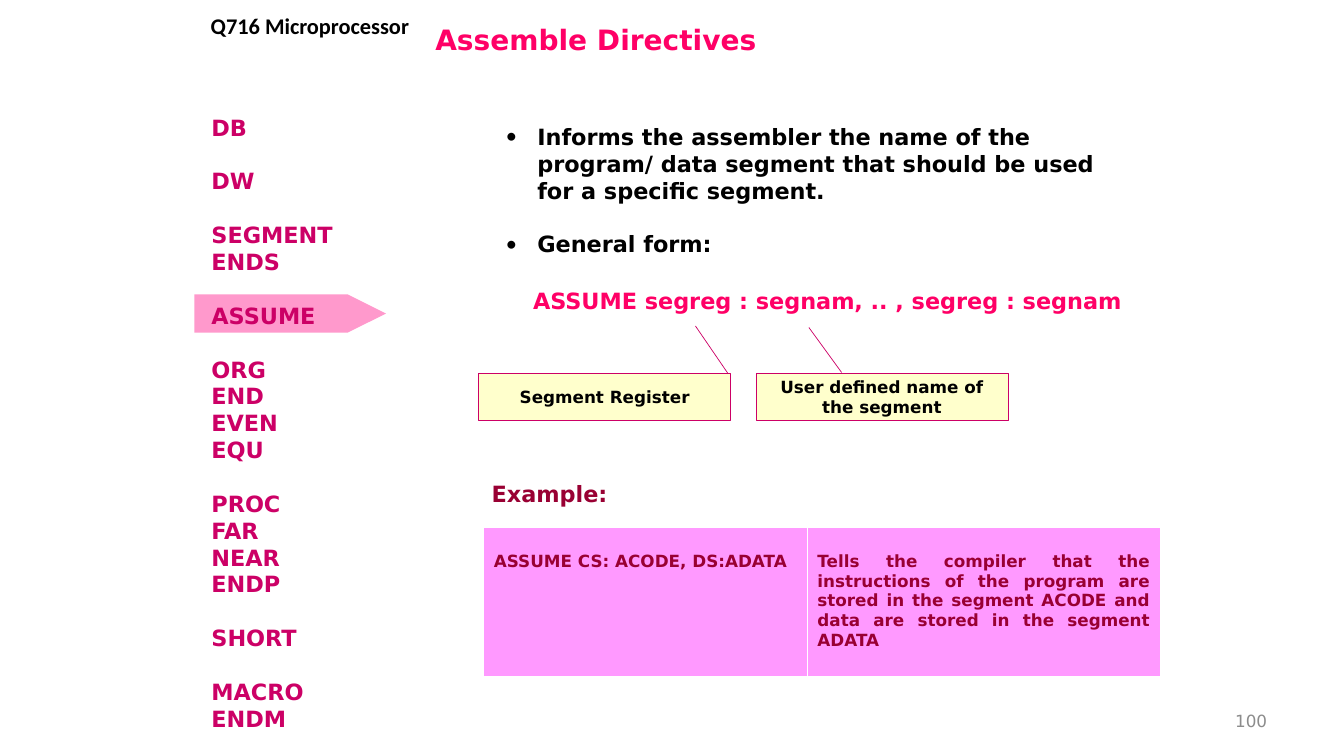
"""Build the slide on the ASSUME assembler directive."""
from dataclasses import dataclass, field
from typing import Any

from lxml.etree import SubElement
from pptx import Presentation
from pptx.dml.color import RGBColor
from pptx.enum.shapes import MSO_SHAPE as Kind
from pptx.enum.text import MSO_ANCHOR as Anchor, PP_ALIGN as Align
from pptx.oxml import parse_xml
from pptx.oxml.ns import nsdecls, qn
from pptx.util import Pt

SANS = "DejaVu Sans"
PINK, ROSE, WINE, BLACK = "FF0066", "CC0066", "990033", "000000"
STEP = 19.2


@dataclass
class Label:
    box: tuple[float, float, float, float]
    groups: list[list[str]]
    hue: str
    size: float = 16
    font: str = SANS
    bold: bool = True
    align: Any = Align.LEFT
    anchor: Any = Anchor.TOP
    wrap: bool = True
    lead: float | None = None
    dots: bool = False


@dataclass
class Callout:
    left: float
    text: str
    bends: tuple[float, ...]


@dataclass
class Cell:
    text: str
    width: float
    align: Any = field(default=Align.LEFT)


LABELS = [
    Label((303.84, 8.64, 632.16, 38.16), [["Assemble Directives"]], PINK, 20, anchor=Anchor.MIDDLE),
    Label((688.32, 500.4, 223.92, 28.8), [["100"]], "8C8C8C", 12, bold=False,
          align=Align.RIGHT, anchor=Anchor.MIDDLE),
    Label((125.28, 5.04, 192.24, 26.64), [["Q716 Microprocessor"]], BLACK, font="Calibri",
          align=Align.CENTER),
    Label((144, 77.76, 117.36, 452.88),
          [["DB"], ["DW"], ["SEGMENT", "ENDS"], ["ASSUME"], ["ORG", "END", "EVEN", "EQU"],
           ["PROC", "FAR", "NEAR", "ENDP"], ["SHORT"], ["MACRO", "ENDM"]], ROSE, lead=STEP),
    Label((354.24, 84.24, 444.24, 104.4),
          [["Informs the assembler the name of the program/ data segment that should be used "
            "for a specific segment."], ["General form:"]], BLACK, lead=STEP, dots=True),
    Label((373.68, 201.6, 436.32, 26.64),
          [["ASSUME segreg : segnam, .. , segreg : segnam"]], PINK, wrap=False),
    Label((344.16, 339.12, 103.68, 26.64), [["Example:"]], WINE, wrap=False),
]
CALLOUTS = [
    Callout(342, "Segment Register", (0.02, 0.99, -0.99, 0.86)),
    Callout(540, "User defined name of the segment", (-0.01, 0.34, -0.96, 0.21)),
]
CELLS = [
    Cell("ASSUME CS: ACODE, DS:ADATA", 231.12),
    Cell("Tells the compiler that the instructions of the program are stored in the segment "
         "ACODE and data are stored in the segment ADATA", 252, Align.JUSTIFY),
]


def put(item: Any, vals: dict[str, Any]) -> None:
    """Set each named attribute."""
    for name, val in vals.items():
        setattr(item, name, val)


def tint(hue: str) -> RGBColor:
    """Turn a hex string into a colour."""
    return RGBColor.from_string(hue)


def paint(item: Any, hue: str) -> None:
    """Give a solid fill."""
    item.fill.solid()
    item.fill.fore_color.rgb = tint(hue)


def write(para: Any, text: str, hue: str, size: float, font: str = SANS, bold: bool = True) -> None:
    """Add one styled run."""
    run = para.add_run()
    run.text = text
    put(run.font, {"name": font, "size": Pt(size), "bold": bold})
    run.font.color.rgb = tint(hue)


def dot(para: Any) -> None:
    """Give a paragraph a hanging bullet."""
    props = para._p.get_or_add_pPr()
    hang = Pt(22.5)
    props.set("marL", str(hang))
    props.set("indent", str(-hang))
    SubElement(props, qn("a:buFont")).set("typeface", "Calibri")
    SubElement(props, qn("a:buChar")).set("char", "•")


def add_label(slide: Any, item: Label) -> None:
    """Draw a text box of one or more line groups."""
    frame = slide.shapes.add_textbox(*map(Pt, item.box)).text_frame
    put(frame, {"word_wrap": item.wrap, "vertical_anchor": item.anchor})
    para = None
    for group in item.groups:
        for row, text in enumerate(group):
            gap = STEP if para is not None and row == 0 else 0
            para = frame.paragraphs[0] if para is None else frame.add_paragraph()
            put(para, {"alignment": item.align, "space_before": Pt(gap)})
            if item.lead:
                para.line_spacing = Pt(item.lead)
            if item.dots:
                dot(para)
            write(para, text, item.hue, item.size, item.font, item.bold)


def add_pointer(slide: Any) -> None:
    """Draw the marker behind the current directive."""
    mark = slide.shapes.add_shape(Kind.FLOWCHART_OFFPAGE_CONNECTOR,
                                  Pt(193.68), Pt(155.52), Pt(27.36), Pt(136.8))
    mark.rotation = 270
    mark.shadow.inherit = False
    paint(mark, "FF99CC")
    mark.line.fill.background()


def add_callout(slide: Any, item: Callout) -> None:
    """Draw a boxed note with its leader line."""
    note = slide.shapes.add_shape(Kind.LINE_CALLOUT_1, Pt(item.left), Pt(266.4), Pt(180), Pt(33.84))
    for num, bend in enumerate(item.bends):
        note.adjustments[num] = bend
    note.shadow.inherit = False
    paint(note, "FFFFCC")
    note.line.color.rgb = tint(ROSE)
    note.line.width = Pt(0.5)
    put(note.text_frame, {"word_wrap": True, "vertical_anchor": Anchor.MIDDLE})
    para = note.text_frame.paragraphs[0]
    para.alignment = Align.CENTER
    write(para, item.text, BLACK, 12)


def edge(cell: Any) -> None:
    """Give a cell white borders."""
    props = cell._tc.get_or_add_tcPr()
    for num, (side, width) in enumerate({"L": 1, "R": 1, "T": 1, "B": 3}.items()):
        props.insert(num, parse_xml(
            f'<a:ln{side} {nsdecls("a")} w="{Pt(width)}"><a:solidFill>'
            f'<a:srgbClr val="FFFFFF"/></a:solidFill></a:ln{side}>'))


def add_sample(slide: Any, cells: list[Cell]) -> None:
    """Draw the example table."""
    wide = sum(item.width for item in cells)
    grid = slide.shapes.add_table(1, len(cells), Pt(345.6), Pt(376.92), Pt(wide), Pt(107)).table
    put(grid, {"first_row": False, "horz_banding": False})
    for num, item in enumerate(cells):
        grid.columns[num].width = Pt(item.width)
        cell = grid.cell(0, num)
        paint(cell, "FF99FF")
        edge(cell)
        put(cell, {"margin_top": Pt(17.3), "vertical_anchor": Anchor.TOP})
        para = cell.text_frame.paragraphs[0]
        para.alignment = item.align
        write(para, item.text, WINE, 12)


def main() -> None:
    """Build and save the deck."""
    deck = Presentation()
    put(deck, {"slide_width": Pt(960), "slide_height": Pt(540)})
    slide = deck.slides.add_slide(deck.slide_layouts[6])
    add_pointer(slide)
    for item in LABELS:
        add_label(slide, item)
    for note in CALLOUTS:
        add_callout(slide, note)
    add_sample(slide, CELLS)
    deck.save("out.pptx")


if __name__ == "__main__":
    main()
